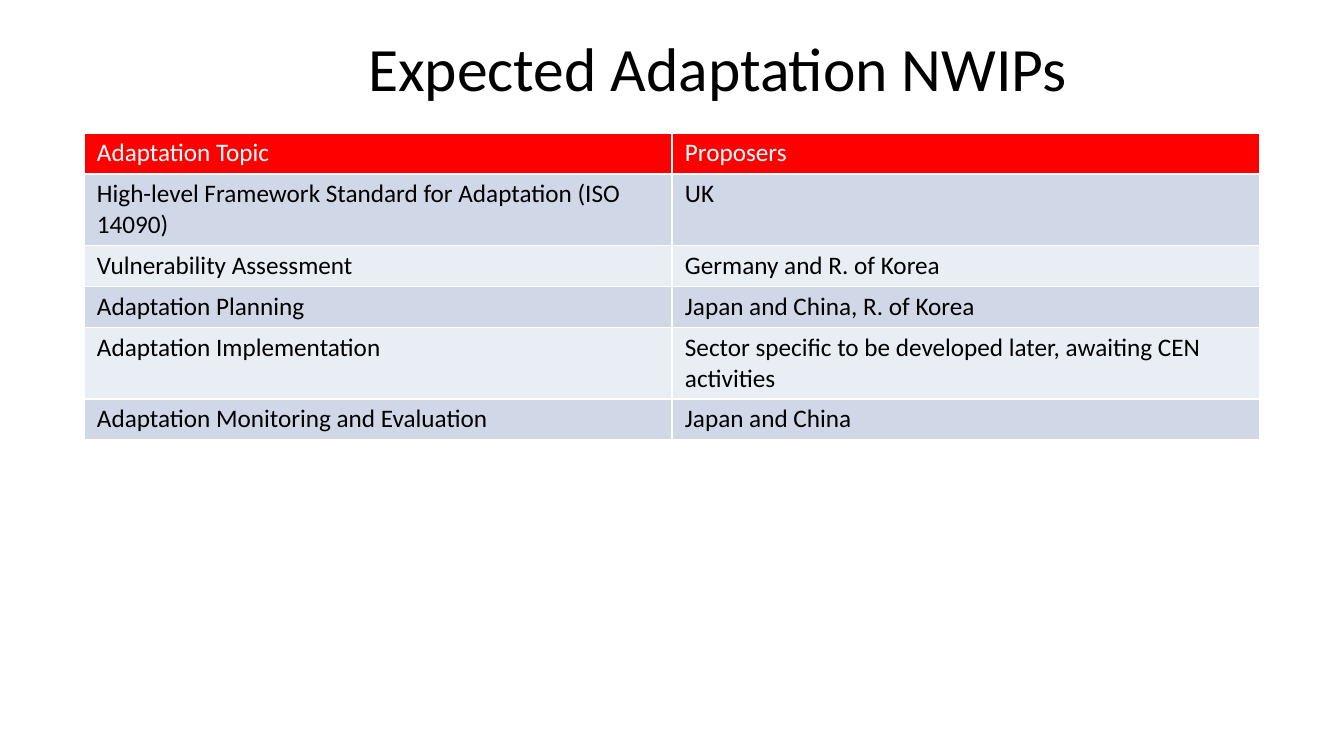
from pptx import Presentation
from pptx.dml.color import RGBColor as RGB
from pptx.enum.text import MSO_ANCHOR as Anchor, PP_ALIGN as Align
from pptx.util import Emu, Pt

BLACK = RGB(0x00, 0x00, 0x00)
WHITE = RGB(0xFF, 0xFF, 0xFF)
RED = RGB(0xFF, 0x00, 0x00)
BLUE = RGB(0xD0, 0xD8, 0xE8)
PALE = RGB(0xE9, 0xED, 0xF4)

TOPICS = [
    ("Adaptation Topic", "Proposers"),
    ("High-level Framework Standard for Adaptation (ISO 14090)", "UK"),
    ("Vulnerability Assessment", "Germany and R. of Korea"),
    ("Adaptation Planning", "Japan and China, R. of Korea"),
    ("Adaptation Implementation",
     "Sector specific to be developed later, awaiting CEN activities"),
    ("Adaptation Monitoring and Evaluation", "Japan and China"),
]


def px(n):
    return Emu(round(n * 914400 / 100.8))


def style(item, form):
    for key, val in form.items():
        setattr(item, key, val)


# Slide
deck = Presentation()
style(deck, {"slide_width": px(1344), "slide_height": px(756)})
slide = deck.slides.add_slide(deck.slide_layouts[5])

# Title
title = slide.shapes.title
style(title, {"left": px(176), "top": px(19),
              "width": px(1084), "height": px(96)})
frame = title.text_frame
style(frame, {"text": "Expected Adaptation NWIPs", "word_wrap": True,
              "vertical_anchor": Anchor.MIDDLE})
line = frame.paragraphs[0]
line.alignment = Align.CENTER
font = line.runs[0].font
style(font, {"name": "Calibri", "size": Pt(44)})
font.color.rgb = BLACK

# Topic table
high = 41
table = slide.shapes.add_table(
    len(TOPICS), 2, px(84), px(133), px(1176), px(high * len(TOPICS))).table
for col in table.columns:
    col.width = px(588)

inset = {"margin_left": px(13), "margin_right": px(13),
         "margin_top": px(5), "margin_bottom": px(5)}
for r, words in enumerate(TOPICS):
    table.rows[r].height = px(high)
    shade = RED if r == 0 else BLUE if r % 2 else PALE
    for c, text in enumerate(words):
        cell = table.cell(r, c)
        style(cell, {"text": text, **inset})
        cell.fill.solid()
        cell.fill.fore_color.rgb = shade
        font = cell.text_frame.paragraphs[0].runs[0].font
        style(font, {"name": "Calibri", "size": Pt(18), "bold": False})
        font.color.rgb = BLACK if r else WHITE

deck.save("out.pptx")
